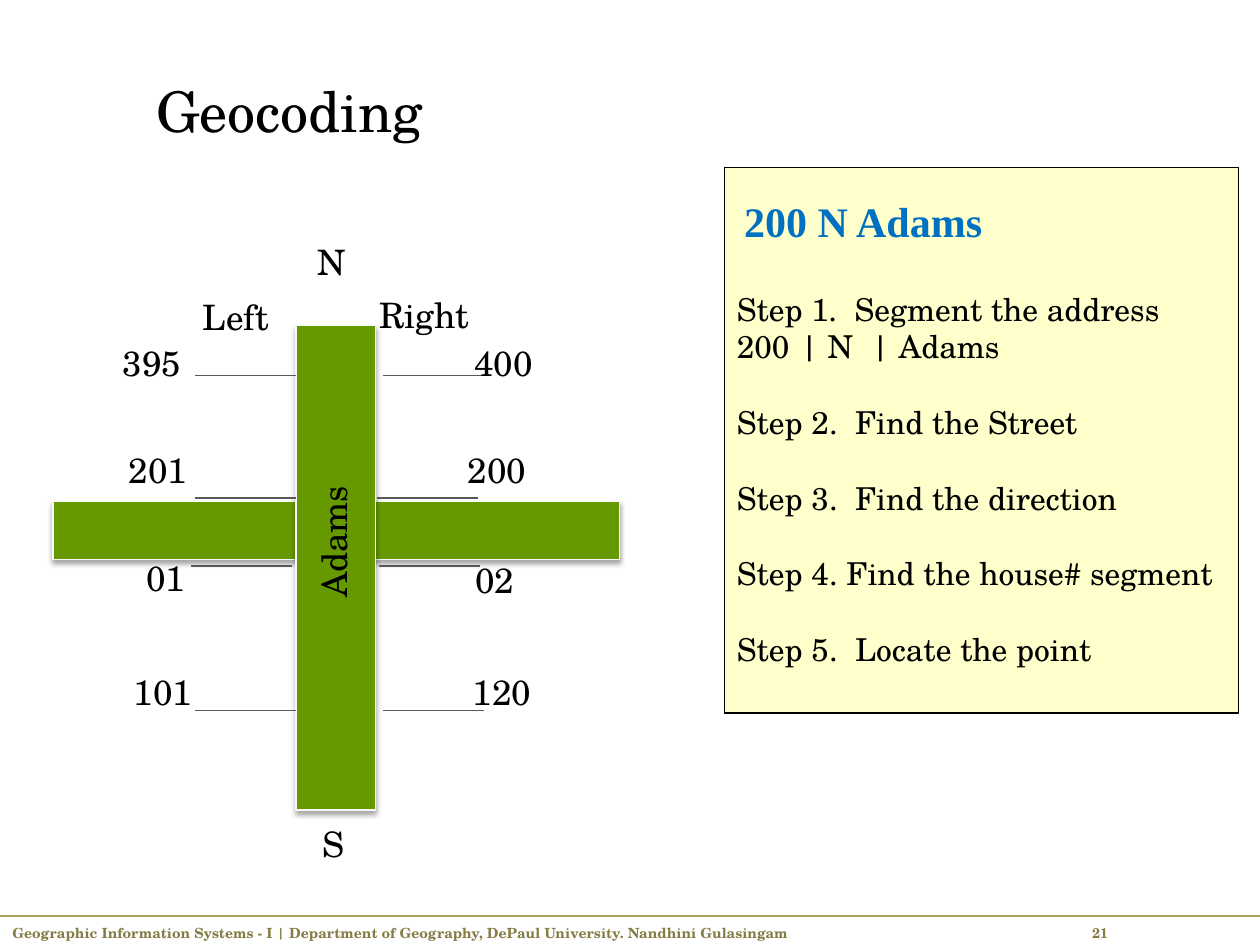
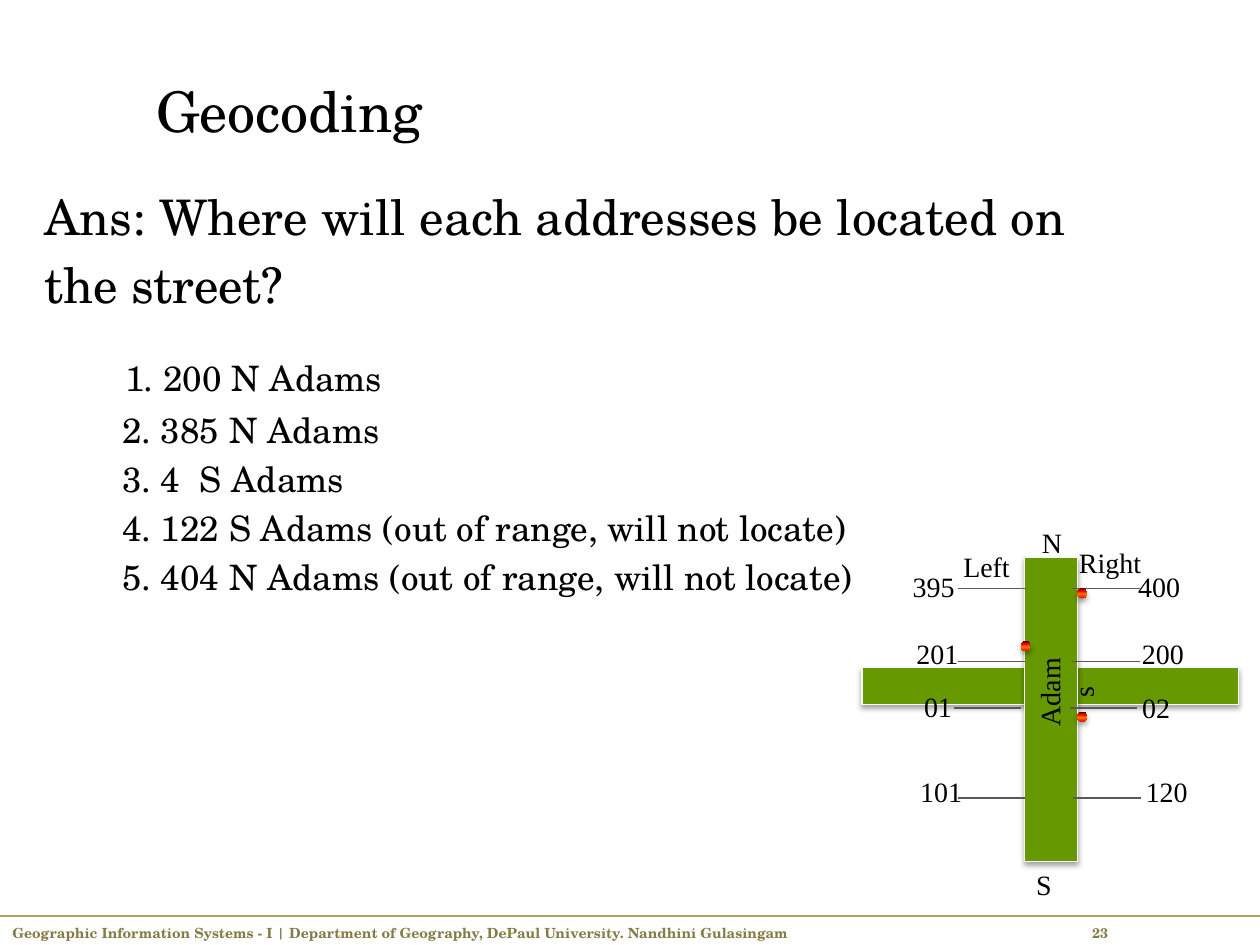
from dataclasses import dataclass
from lxml.etree import SubElement as Sub
from pptx import Presentation
from pptx.dml.color import RGBColor as RGB
from pptx.enum.shapes import MSO_CONNECTOR as CONN, MSO_SHAPE as SHAPE
from pptx.enum.text import MSO_ANCHOR as ANCHOR, PP_ALIGN as ALIGN
from pptx.oxml import parse_xml
from pptx.oxml.ns import nsdecls, qn
from pptx.util import Inches, Pt


@dataclass(frozen=True)
class Theme:
    serif: str = "TeX Gyre Schola"
    times: str = "Times New Roman"
    ink: str = "000000"
    blue: str = "0070C0"
    road: str = "669900"
    road_edge: str = "F9F9F9"
    tick: str = "595959"
    panel: str = "FFFFCC"
    footer: str = "847C44"
    rule: str = "ACA35D"
    dot: tuple = ((0, "FF0000"), (45, "FF7A00"), (70, "FF0300"), (100, "4D0808"))
    title_pt: int = 32
    lead_pt: int = 28
    address_pt: int = 24
    item_pt: int = 20
    step_pt: int = 18
    small_pt: int = 16
    footer_pt: int = 8


T = Theme()
prs = Presentation()
prs.slide_width, prs.slide_height = Inches(10), Inches(7.5)
COL = prs.slide_width / 100
ROW = prs.slide_height / 75


def add_text(s, at, lines, font=T.serif, color=T.ink, bold=False, align=ALIGN.LEFT, wrap=True):
    x, y, w, h = at
    sp = s.shapes.add_textbox(int(x * COL), int(y * ROW), int(w * COL), int(h * ROW))
    tf = sp.text_frame
    tf.word_wrap = wrap
    for i, (words, size, before, left) in enumerate(lines):
        p = tf.paragraphs[0] if i == 0 else tf.add_paragraph()
        p.alignment = align
        if before:
            p.space_before = Pt(before)
        if left:
            p._p.get_or_add_pPr().set("marL", str(int(left * COL)))
        r = p.add_run()
        r.text = words
        r.font.name, r.font.size, r.font.bold = font, Pt(size), bold
        r.font.color.rgb = RGB.from_string(color)
    return sp


def add_block(s, at, kind, fill, edge, shadow):
    x, y, w, h = at
    sp = s.shapes.add_shape(kind, int(x * COL), int(y * ROW), int(w * COL), int(h * ROW))
    sp.shadow.inherit = False
    spPr = sp._element.spPr
    if edge:
        sp.line.color.rgb = RGB.from_string(edge)
        sp.line.width = Pt(0.75)
    else:
        sp.line.fill.background()
    if isinstance(fill, str):
        sp.fill.solid()
        sp.fill.fore_color.rgb = RGB.from_string(fill)
    else:
        stops = "".join(f'<a:gs pos="{pos * 1000}"><a:srgbClr val="{c}"/></a:gs>' for pos, c in fill)
        spPr.find(qn("a:prstGeom")).addnext(parse_xml(
            f'<a:gradFill {nsdecls("a")}><a:gsLst>{stops}</a:gsLst><a:lin ang="16200000" scaled="0"/></a:gradFill>'))
    if shadow:
        spPr.find(qn("a:effectLst")).append(parse_xml(
            f'<a:outerShdw {nsdecls("a")} blurRad="{Pt(3.1)}" dist="{Pt(1.8)}" dir="5400000" rotWithShape="0">'
            '<a:srgbClr val="000000"><a:alpha val="35000"/></a:srgbClr></a:outerShdw>'))


steps = [
    ("Step 1.  Segment the address", T.step_pt, 0, 0),
    ("| N  | Adams", T.step_pt, 0, 5),
]
steps += [(words, T.step_pt, 21.6, 0) for words in (
    "Step 2.  Find the Street",
    "Step 3.  Find the direction",
    "Step 4. Find the house# segment",
    "Step 5.  Locate the point",
)]

answers = [
    ("Ans: Where will each addresses be located on", T.lead_pt, 0, 0),
    ("the street?", T.lead_pt, 5.6, 0),
    ("1. 200 N Adams", T.item_pt, 24.5, 6.4),
    ("2. 385 N Adams", T.item_pt, 5.7, 6.15),
]
answers += [(words, T.item_pt, 4, 6.15) for words in (
    "3. 4  S Adams",
    "4. 122 S Adams (out of range, will not locate)",
    "5. 404 N Adams (out of range, will not locate)",
)]

names = ["N", "S", "Left", "Right", "395", "201", "01", "101", "400", "200", "02", "120"]
maps = [
    dict(
        page=21, font=T.serif, size=T.item_pt, label_h=4.4,
        roads=[(4.2, 39.8, 45, 4.6), (23.5, 25.8, 6.3, 38.5)],
        tick_rows=[29.8, 39.5, 44.9, 56.4], tick_w=8,
        tick_cols=[(15.5, 15.5, 15.2, 15.5), (30.4, 29.9, 30.1, 30.4)],
        labels=[(26.35, 20.8), (26.5, 67), (18.75, 25.2), (33.7, 25),
                (12.05, 28.8), (12.55, 37.3), (13.15, 45.9), (12.95, 54.9),
                (39.95, 28.8), (39.45, 37.3), (39.25, 46), (39.85, 54.9)],
        street=(26.5, 43), street_w=11, street_wrap=False, dots=[],
    ),
    dict(
        page=23, font=T.times, size=T.small_pt, label_h=3.7,
        roads=[(68.4, 53, 29.9, 2.9), (81.3, 44.2, 4.2, 24.2)],
        tick_rows=[46.7, 52.5, 56.2, 63.35], tick_w=5.35,
        tick_cols=[(76, 76, 75.7, 76), (85.1, 85.1, 84.9, 85.2)],
        labels=[(83.5, 43.05), (82.85, 70.25), (78.3, 44.95), (88.1, 44.65),
                (74.1, 46.55), (74.4, 51.85), (74.45, 56.05), (74.7, 62.85),
                (92, 46.55), (92.3, 51.85), (91.75, 56.15), (92.6, 62.85)],
        street=(83.3, 54.95), street_w=7.4, street_wrap=True,
        dots=[(85.5, 46.7), (81, 50.9), (85.5, 56.5)],
    ),
]
LABEL_W = 12

for m in maps:
    s = prs.slides.add_slide(prs.slide_layouts[6])
    title = add_text(s, (11.4, 2.5, 84.3, 9.4), [("Geocoding", T.title_pt, 0, 0)])
    title.text_frame.vertical_anchor = ANCHOR.BOTTOM

    if m["page"] == 21:
        add_block(s, (57.5, 13.3, 40.8, 43.3), SHAPE.RECTANGLE, T.panel, T.ink, False)
        add_text(s, (57, 15, 23, 5), [("200 N Adams", T.address_pt, 0, 0)],
                 T.times, T.blue, True, ALIGN.CENTER, False)
        sp = add_text(s, (57.5, 22.5, 40.8, 31.3), steps)
        pPr = sp.text_frame.paragraphs[1]._p.get_or_add_pPr()
        pPr.set("indent", str(int(-5 * COL)))
        Sub(pPr, qn("a:buFont"), typeface=T.serif)
        Sub(pPr, qn("a:buAutoNum"), type="arabicPlain", startAt="200")
    else:
        add_text(s, (2.55, 14.3, 95.8, 55.7), answers)

    for road in m["roads"]:
        add_block(s, road, SHAPE.RECTANGLE, T.road, T.road_edge, True)

    rules = [(x, y, m["tick_w"], T.tick, 1)
             for side in m["tick_cols"] for x, y in zip(side, m["tick_rows"])]
    rules.append((0, 72.7, 100, T.rule, 0.75))
    for x, y, w, color, pt in rules:
        ln = s.shapes.add_connector(CONN.STRAIGHT, int(x * COL), int(y * ROW), int((x + w) * COL), int(y * ROW))
        ln.line.color.rgb = RGB.from_string(color)
        ln.line.width = Pt(pt)
        Sub(ln._element.spPr, qn("a:effectLst"))

    h = m["label_h"]
    for name, (cx, cy) in zip(names, m["labels"]):
        add_text(s, (cx - LABEL_W / 2, cy - h / 2, LABEL_W, h), [(name, m["size"], 0, 0)],
                 m["font"], align=ALIGN.CENTER, wrap=False)
    cx, cy = m["street"]
    w = m["street_w"]
    street = add_text(s, (cx - w / 2, cy - h / 2, w, h), [("Adams", m["size"], 0, 0)],
                      m["font"], align=ALIGN.CENTER, wrap=m["street_wrap"])
    street.rotation = 270

    for x, y in m["dots"]:
        add_block(s, (x, y, 0.8, 0.8), SHAPE.OVAL, T.dot, None, True)

    credit = "Geographic Information Systems - I | Department of Geography, DePaul University. Nandhini Gulasingam"
    foot = add_text(s, (0, 72.9, 100, 2.5), [(f"{credit}\t{m['page']}", T.footer_pt, 0, 0)],
                    color=T.footer, bold=True)
    tabs = Sub(foot.text_frame.paragraphs[0]._p.get_or_add_pPr(), qn("a:tabLst"))
    Sub(tabs, qn("a:tab"), pos=str(int(85.7 * COL)), algn="l")

prs.save("out.pptx")
